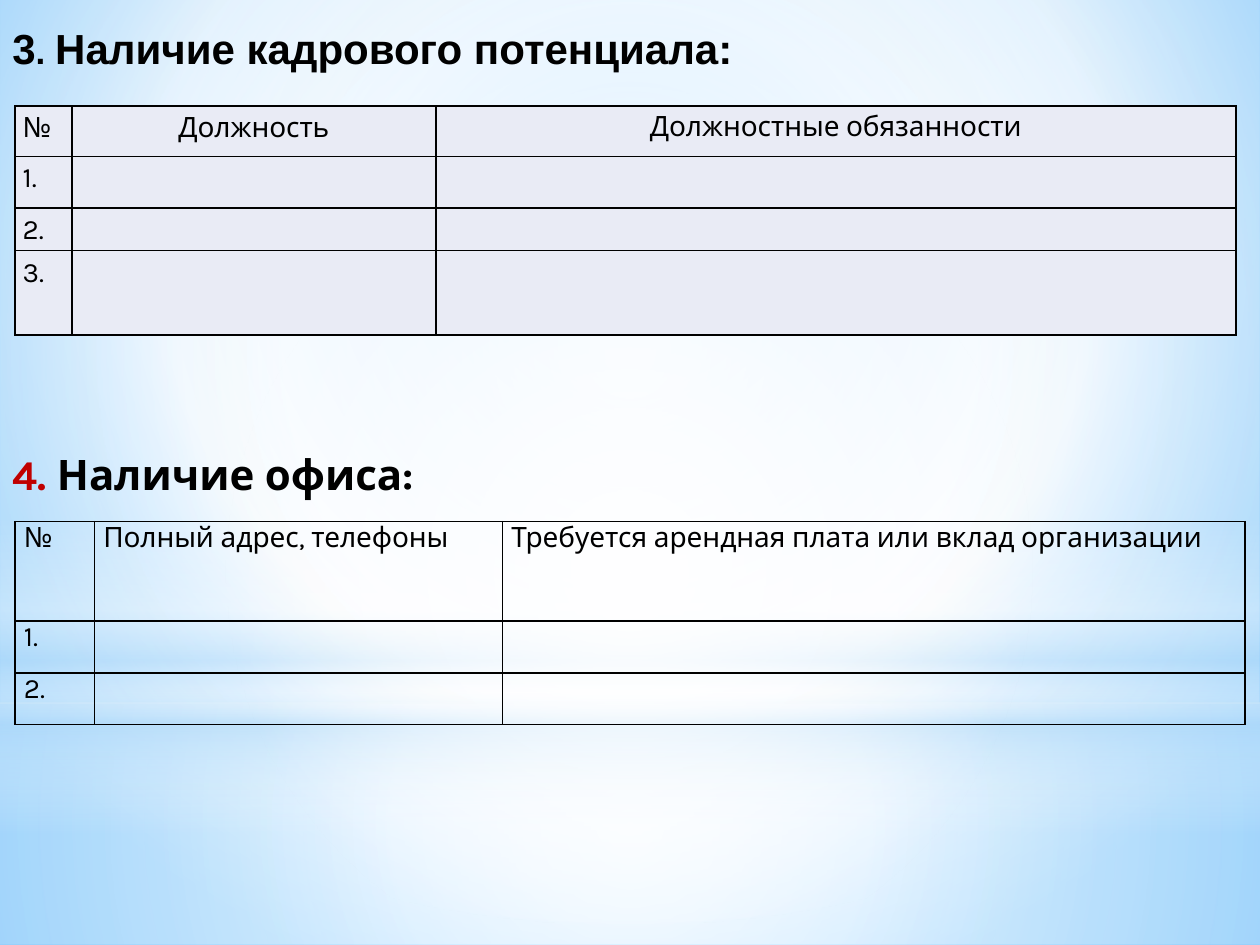
"""Build a slide with staff and office availability tables on a soft blue background."""
import lxml.etree
import pptx
import pptx.dml.color
import pptx.enum.shapes
import pptx.enum.text
import pptx.oxml.ns
import pptx.util

Inches, Pt = pptx.util.Inches, pptx.util.Pt
qn = pptx.oxml.ns.qn
ALIGN = pptx.enum.text.PP_ALIGN
SHAPE = pptx.enum.shapes.MSO_SHAPE

COLORS = {"ink": "000000", "accent": "C00000", "cell": "E9EBF5", "white": "FFFFFF",
          "haze": "B4DCFA", "sky": "9ED5FF", "blue": "5BB9FF"}

CENTER = (50, 50, 50, 50)
SKY_STOPS = [(0, "sky", 100), (60, "white", 100), (100, "blue", 100)]
SKY_FOCUS = (20, 10, 20, 60)
GLOWS = [
    (SHAPE.RECTANGLE, (0, 5.58, 10, 1.92),
     [(0, "white", 91), (37, "white", 76), (100, "haze", 79)], CENTER),
    (SHAPE.RECTANGLE, (0, 0, 10, 5.58),
     [(0, "white", 89), (48, "white", 62), (100, "haze", 79)], CENTER),
    (SHAPE.RECTANGLE, (0, 4.12, 10, 2.5),
     [(0, "white", 0), (29, "white", 30), (45, "haze", 40), (55, "white", 26),
      (65, "haze", 60), (100, "white", 0)], None),
    (SHAPE.OVAL, (0, 1.75, 10, 5.58),
     [(0, "white", 100), (56, "white", 0)], CENTER),
]

HEADINGS = [
    {"box": (0, 0.13, 5.94, 0.5), "wrap": False, "anchor": pptx.enum.text.MSO_ANCHOR.MIDDLE,
     "runs": [("3", 24, "Arial", "ink"), (". ", 20, "Arial", "ink"),
              ("Наличие кадрового потенциала:", 24, "Arial", "ink")]},
    {"box": (0, 3.51, 9.8, 0.5), "wrap": True, "anchor": pptx.enum.text.MSO_ANCHOR.TOP,
     "runs": [("4. ", 24, "Karla", "accent"), ("Наличие офиса:", 24, "Karla", "ink")]},
]

TABLES = [
    {"origin": (0.12, 0.84), "columns": (0.45, 2.89, 6.35), "heights": (0.4, 0.41, 0.34, 0.67),
     "rows": [("№", "Должность", "Должностные обязанности"),
              ("1.", "", ""), ("2.", "", ""), ("3.", "", "")],
     "aligns": (ALIGN.LEFT, ALIGN.CENTER, ALIGN.CENTER),
     "insets": ((0.06, 0.01), (0.01, 0.01), (0.07, 0)), "spacing": 1.15, "fill": "cell"},
    {"origin": (0.12, 4.14), "columns": (0.63, 3.24, 5.89), "heights": (0.79, 0.41, 0.41),
     "rows": [("№", "Полный адрес, телефоны", "Требуется арендная плата или вклад организации"),
              ("1.", "", ""), ("2.", "", "")],
     "aligns": (ALIGN.JUSTIFY, ALIGN.LEFT, ALIGN.JUSTIFY),
     "insets": ((0.07, 0),) * 3, "spacing": 1, "fill": None},
]


def rgb(name):
    return pptx.dml.color.RGBColor.from_string(COLORS[name])


def add(parent, tag, **attributes):
    return lxml.etree.SubElement(parent, qn(tag), {k: str(v) for k, v in attributes.items()})


def paint_gradient(fill, element, stops, focus):
    fill.gradient()
    gradient = next(element.iter(qn("a:gradFill")))
    for child in list(gradient):
        gradient.remove(child)
    stop_list = add(gradient, "a:gsLst")
    for position, color, opacity in stops:
        stop = add(stop_list, "a:gs", pos=position * 1000)
        add(add(stop, "a:srgbClr", val=COLORS[color]), "a:alpha", val=opacity * 1000)
    if focus:
        sides = {side: value * 1000 for side, value in zip("ltrb", focus)}
        add(add(gradient, "a:path", path="circle"), "a:fillToRect", **sides)
    else:
        add(gradient, "a:lin", ang=90 * 60000, scaled=0)


def style_run(run, size, font, color, bold):
    run.font.size, run.font.name, run.font.bold = Pt(size), font, bold
    run.font.color.rgb = rgb(color)


def add_borders(cell):
    properties = cell._tc.get_or_add_tcPr()
    for index, side in enumerate(("a:lnL", "a:lnR", "a:lnT", "a:lnB")):
        line = add(properties, side, w=Pt(1))
        add(add(line, "a:solidFill"), "a:srgbClr", val=COLORS["ink"])
        properties.insert(index, line)


def add_heading(slide, heading):
    box = slide.shapes.add_textbox(*map(Inches, heading["box"]))
    frame = box.text_frame
    frame.word_wrap, frame.vertical_anchor = heading["wrap"], heading["anchor"]
    frame.auto_size = pptx.enum.text.MSO_AUTO_SIZE.SHAPE_TO_FIT_TEXT
    for text, size, font, color in heading["runs"]:
        run = frame.paragraphs[0].add_run()
        run.text = text
        style_run(run, size, font, color, True)


def add_grid(slide, content):
    columns, heights = content["columns"], content["heights"]
    size = (sum(columns), sum(heights))
    table = slide.shapes.add_table(len(heights), len(columns),
                                   *map(Inches, content["origin"] + size)).table
    table.first_row = table.horz_banding = False
    for column, width in zip(table.columns, columns):
        column.width = Inches(width)
    for row, height, texts in zip(table.rows, heights, content["rows"]):
        row.height = Inches(height)
        for cell, text, align, (side, top) in zip(row.cells, texts, content["aligns"],
                                                  content["insets"]):
            cell.margin_left = cell.margin_right = Inches(side)
            cell.margin_top = cell.margin_bottom = Inches(top)
            if content["fill"]:
                cell.fill.solid()
                cell.fill.fore_color.rgb = rgb(content["fill"])
            else:
                cell.fill.background()
            add_borders(cell)
            if text:
                paragraph = cell.text_frame.paragraphs[0]
                paragraph.text = text
                paragraph.alignment, paragraph.line_spacing = align, content["spacing"]
                style_run(paragraph.runs[0], 16, "Karla", "ink", False)


def main():
    deck = pptx.Presentation()
    deck.slide_width, deck.slide_height = Inches(10), Inches(7.5)
    slide = deck.slides.add_slide(deck.slide_layouts[6])
    paint_gradient(slide.background.fill, slide.element, SKY_STOPS, SKY_FOCUS)
    for kind, box, stops, focus in GLOWS:
        glow = slide.shapes.add_shape(kind, *map(Inches, box))
        glow.shadow.inherit = False
        glow.line.fill.background()
        paint_gradient(glow.fill, glow.element, stops, focus)
    for heading, content in zip(HEADINGS, TABLES):
        add_grid(slide, content)
        add_heading(slide, heading)
    deck.save("out.pptx")


if __name__ == "__main__":
    main()
